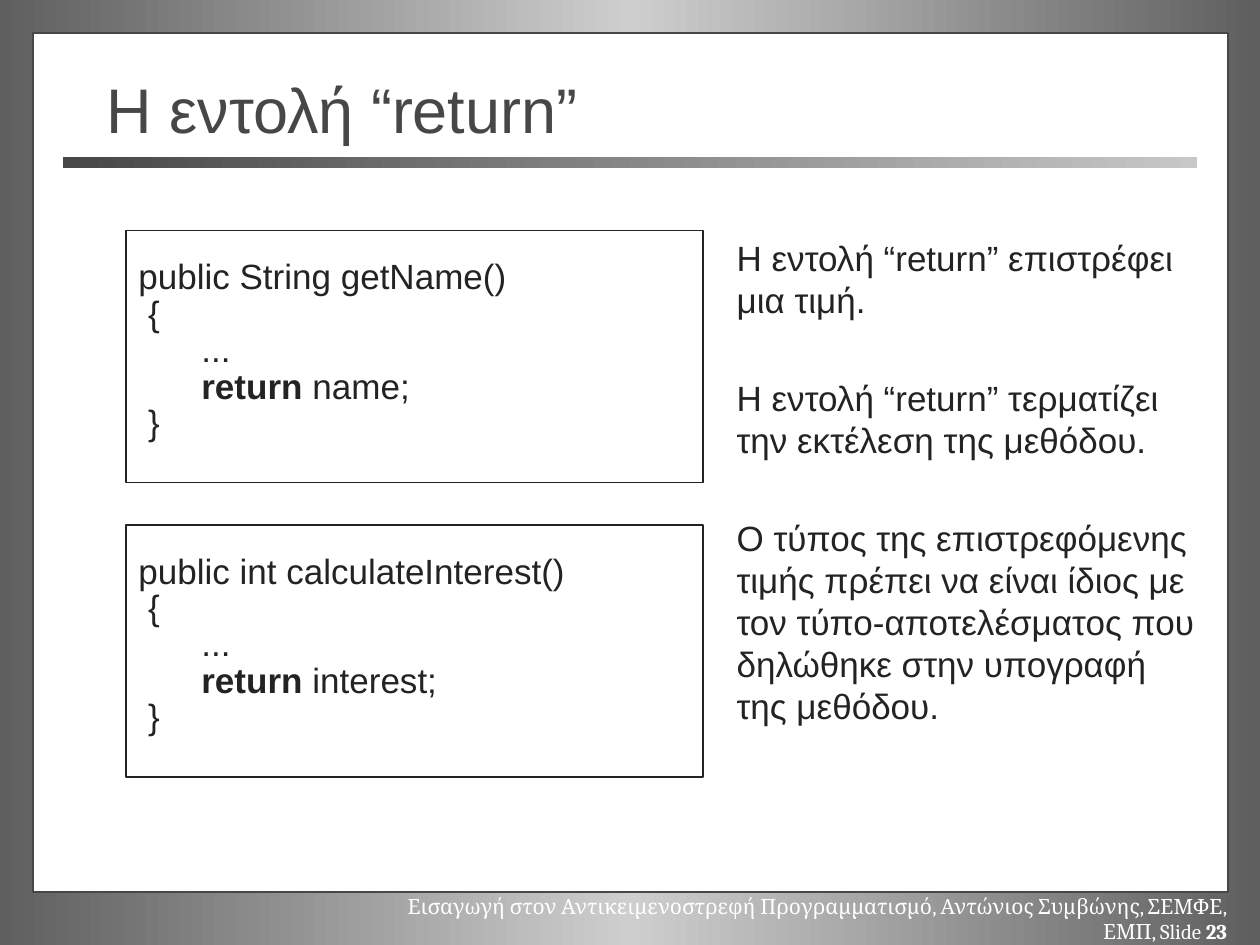
"""Build the slide on the Java return statement, with two code boxes and three remarks."""
import copy

import pptx
import pptx.dml.color
import pptx.enum.shapes
import pptx.enum.text
import pptx.util

Cm, Pt = pptx.util.Cm, pptx.util.Pt
RGB = pptx.dml.color.RGBColor.from_string
RECTANGLE = pptx.enum.shapes.MSO_SHAPE.RECTANGLE
ALIGN = pptx.enum.text.PP_ALIGN
ANCHOR = pptx.enum.text.MSO_ANCHOR
AUTO_SIZE = pptx.enum.text.MSO_AUTO_SIZE

THEME = {
    "edge": RGB("5F5F5F"),
    "sheen": RGB("CECECE"),
    "paper": RGB("FFFFFF"),
    "heading": RGB("474747"),
    "rule_end": RGB("C7C7C7"),
    "ink": RGB("232323"),
    "title_size": Pt(36),
    "body_size": Pt(20),
    "footer_size": Pt(12),
    "body_font": "Arial",
    "footer_font": "Cambria",
}
BODY = {"name": THEME["body_font"], "size": THEME["body_size"]}
FOOTER = {"name": THEME["footer_font"], "size": THEME["footer_size"]}


def set_frame(frame, **values):
    defaults = {"word_wrap": True, "auto_size": AUTO_SIZE.NONE,
                "vertical_anchor": ANCHOR.TOP}
    for key, value in (defaults | values).items():
        setattr(frame, key, value)


def write(paragraph, runs, font, color, **values):
    for key, value in values.items():
        setattr(paragraph, key, value)
    for words, bold in runs:
        run = paragraph.add_run()
        run.text = words
        for key, value in (font | {"bold": bold}).items():
            setattr(run.font, key, value)
        run.font.color.rgb = color


deck = pptx.Presentation()
deck.slide_width, deck.slide_height = Cm(25.4), Cm(19.05)
slide = deck.slides.add_slide(deck.slide_layouts[5])
shapes = slide.shapes

backdrop = slide.background.fill
backdrop.gradient()
backdrop.gradient_angle = 0
for stop, position in zip(backdrop.gradient_stops, (0, 1)):
    stop.color.rgb = THEME["edge"]
    stop.position = position
first_stop = slide.background._cSld.xpath(".//a:gs")[0]
first_stop.addnext(copy.deepcopy(first_stop))
middle = backdrop.gradient_stops[1]
middle.color.rgb = THEME["sheen"]
middle.position = 0.5

paper = shapes.add_shape(RECTANGLE, Cm(0.66), Cm(0.66), Cm(24.1), Cm(17.32))
paper.shadow.inherit = False
paper.fill.solid()
paper.fill.fore_color.rgb = THEME["paper"]
paper.line.color.rgb = THEME["heading"]
paper.line.width = Pt(1)

footer = shapes.add_textbox(Cm(7.21), Cm(17.88), Cm(17.78), Cm(0.76)).text_frame
set_frame(footer)
write(footer.paragraphs[0],
      [("Εισαγωγή στον Αντικειμενοστρεφή Προγραμματισμό, Αντώνιος Συμβώνης, "
        "ΣΕΜΦΕ, ΕΜΠ, Slide ", False), ("23", True)],
      FOOTER, THEME["paper"], alignment=ALIGN.RIGHT)

title_rule = shapes.add_shape(RECTANGLE, Cm(1.27), Cm(3.17), Cm(22.86), Cm(0.21))
title_rule.shadow.inherit = False
title_rule.line.fill.background()
title_rule.fill.gradient()
title_rule.fill.gradient_angle = 0
for stop, position, color in zip(title_rule.fill.gradient_stops, (0, 1),
                                 ("heading", "rule_end")):
    stop.position = position
    stop.color.rgb = THEME[color]

title = shapes.title
title.left, title.top, title.width, title.height = Cm(1.9), Cm(1.4), Cm(21.6), Cm(1.57)
set_frame(title.text_frame, vertical_anchor=ANCHOR.MIDDLE)
write(title.text_frame.paragraphs[0], [("Η εντολή “return”", False)],
      BODY | {"size": THEME["title_size"]}, THEME["heading"], alignment=ALIGN.LEFT)
shapes._spTree.append(title._element)

methods = [("String getName()", "name"), ("int calculateInterest()", "interest")]
for index, (signature, result) in enumerate(methods):
    method = shapes.add_shape(RECTANGLE, Cm(2.54), Cm(4.65 + 5.93 * index),
                              Cm(11.64), Cm(5.08))
    method.shadow.inherit = False
    method.fill.background()
    method.line.color.rgb = THEME["ink"]
    method.line.width = Pt(1)
    set_frame(method.text_frame, margin_top=Cm(0.72))
    code = [
        [(f"public {signature}", False)],
        [(" {", False)],
        [("\t...", False)],
        [("\t", False), ("return", True), (f" {result};", False)],
        [(" }", False)],
    ]
    for number, runs in enumerate(code):
        frame = method.text_frame
        line = frame.add_paragraph() if number else frame.paragraphs[0]
        write(line, runs, BODY, THEME["ink"], alignment=ALIGN.LEFT,
              line_spacing=0.7, space_before=Pt(4))

remarks = [
    "Η εντολή “return” επιστρέφει μια τιμή.",
    "Η εντολή “return” τερματίζει την εκτέλεση της μεθόδου.",
    "Ο τύπος της επιστρεφόμενης τιμής πρέπει να είναι ίδιος με τον "
    "τύπο-αποτελέσματος που δηλώθηκε στην υπογραφή της μεθόδου.",
]
notes = shapes.add_textbox(Cm(14.6), Cm(4.65), Cm(9.96), Cm(10.24)).text_frame
set_frame(notes)
for number, remark in enumerate(remarks):
    paragraph = notes.add_paragraph() if number else notes.paragraphs[0]
    write(paragraph, [(remark, False)], BODY, THEME["ink"],
          space_before=Pt(32 if number else 4))

deck.save("out.pptx")
